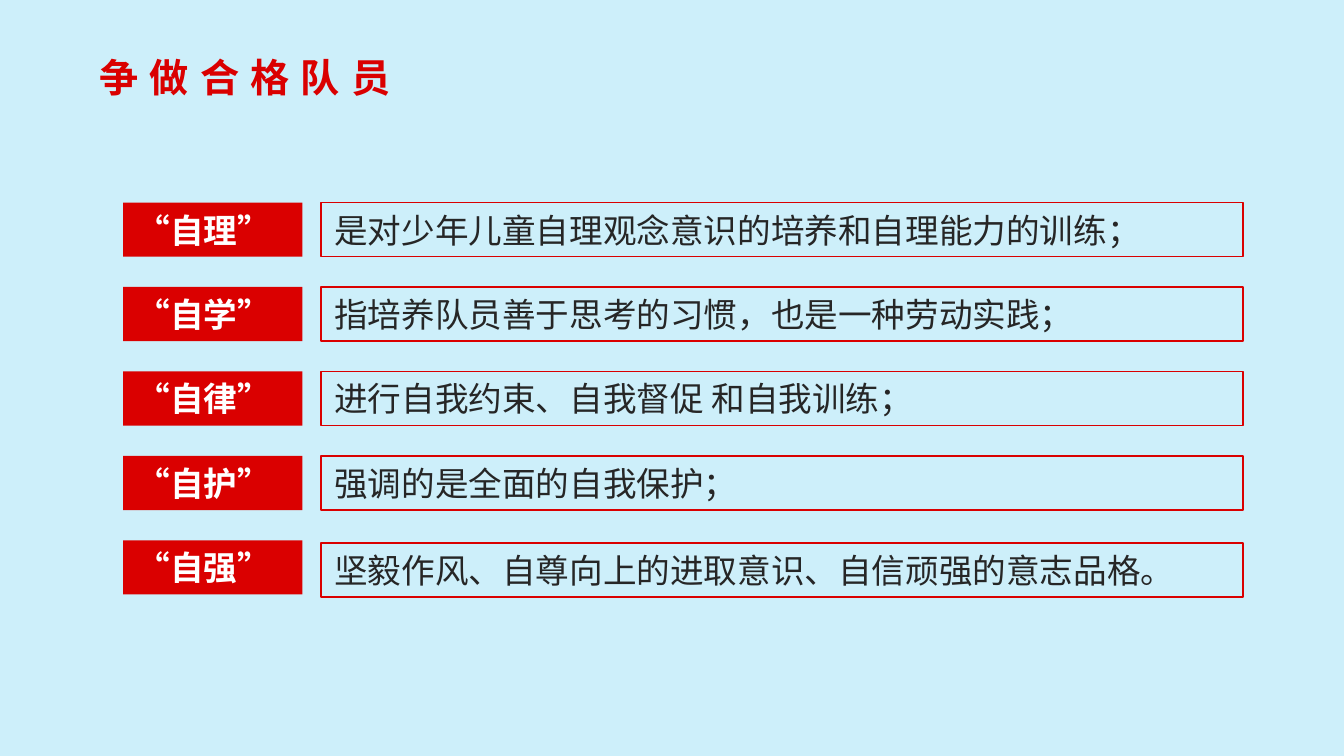
from dataclasses import dataclass

from lxml import etree
from pptx import Presentation
from pptx.dml.color import RGBColor
from pptx.enum import lang, shapes, text
from pptx.oxml.ns import qn
from pptx.util import Pt


@dataclass(frozen=True)
class Theme:
    font: str = "Noto Sans CJK SC"
    back: RGBColor = RGBColor(0xCD, 0xEF, 0xFA)
    red: RGBColor = RGBColor(0xDA, 0x00, 0x00)
    ink: RGBColor = RGBColor(0x26, 0x26, 0x26)
    white: RGBColor = RGBColor(0xFF, 0xFF, 0xFF)
    title_size: int = 21
    body_size: int = 18
    spacing: int = 6
    line: float = 0.75


THEME = Theme()

# Label, explanation, downward shift of the explanation in points
ROWS = [
    ("“自理”", "是对少年儿童自理观念意识的培养和自理能力的训练；", 0),
    ("“自学”", "指培养队员善于思考的习惯，也是一种劳动实践；", 0),
    ("“自律”", "进行自我约束、自我督促 和自我训练；", 0),
    ("“自护”", "强调的是全面的自我保护；", 0),
    ("“自强”", "坚毅作风、自尊向上的进取意识、自信顽强的意志品格。", 1.4),
]


def write(sp, words, size, color, bold=False, wrap=True):
    """Set one left-aligned line of Chinese text and return its run."""
    tf = sp.text_frame
    frame = {
        "word_wrap": wrap,
        "auto_size": text.MSO_AUTO_SIZE.NONE,
        "vertical_anchor": text.MSO_ANCHOR.MIDDLE,
        "margin_left": Pt(7.2), "margin_right": Pt(7.2),
        "margin_top": Pt(3.6), "margin_bottom": Pt(3.6),
    }
    for name, value in frame.items():
        setattr(tf, name, value)
    p = tf.paragraphs[0]
    p.alignment = text.PP_ALIGN.LEFT
    p.line_spacing = 1.0
    r = p.add_run()
    r.text = words
    r.font.color.rgb = color
    style = {
        "name": THEME.font, "size": Pt(size), "bold": bold,
        "language_id": lang.MSO_LANGUAGE_ID.SIMPLIFIED_CHINESE,
    }
    for name, value in style.items():
        setattr(r.font, name, value)
    ea = etree.SubElement(r._r.get_or_add_rPr(), qn("a:ea"))
    ea.set("typeface", THEME.font)
    return r


def add_title(s, words, left, top, width, height):
    sp = s.shapes.title
    box = {"left": left, "top": top, "width": width, "height": height}
    for name, value in box.items():
        setattr(sp, name, Pt(value))
    r = write(sp, words, THEME.title_size, THEME.red, bold=True, wrap=False)
    r._r.get_or_add_rPr().set("spc", str(THEME.spacing * 100))


def add_box(s, left, top, width, height):
    sp = s.shapes.add_shape(shapes.MSO_SHAPE.RECTANGLE,
                            Pt(left), Pt(top), Pt(width), Pt(height))
    sp.shadow.inherit = False
    return sp


def add_label(s, words, *box):
    sp = add_box(s, *box)
    sp.fill.solid()
    sp.fill.fore_color.rgb = THEME.red
    sp.line.fill.background()
    write(sp, words, THEME.body_size, THEME.white, bold=True)


def add_explanation(s, words, *box):
    sp = add_box(s, *box)
    sp.fill.background()
    sp.line.color.rgb = THEME.red
    sp.line.width = Pt(THEME.line)
    write(sp, words, THEME.body_size, THEME.ink)


def add_rows(s, rows, left, top, width, height):
    """Spread label and explanation pairs evenly over the box."""
    label_w, gap, row_h = 96, 10, 29
    pitch = (height - row_h) / (len(rows) - 1)
    for i, (label, words, shift) in enumerate(rows):
        y = top + i * pitch
        add_label(s, label, left, y, label_w, row_h)
        add_explanation(s, words, left + label_w + gap, y + shift,
                        width - label_w - gap, row_h)


def main():
    prs = Presentation()
    prs.slide_width, prs.slide_height = Pt(720), Pt(405)
    s = prs.slides.add_slide(prs.slide_layouts[5])
    s.background.fill.solid()
    s.background.fill.fore_color.rgb = THEME.back
    add_title(s, "争做合格队员", 46, 25.2, 192, 32.4)
    add_rows(s, ROWS, 66, 108.5, 600, 210)
    prs.save("out.pptx")


if __name__ == "__main__":
    main()
